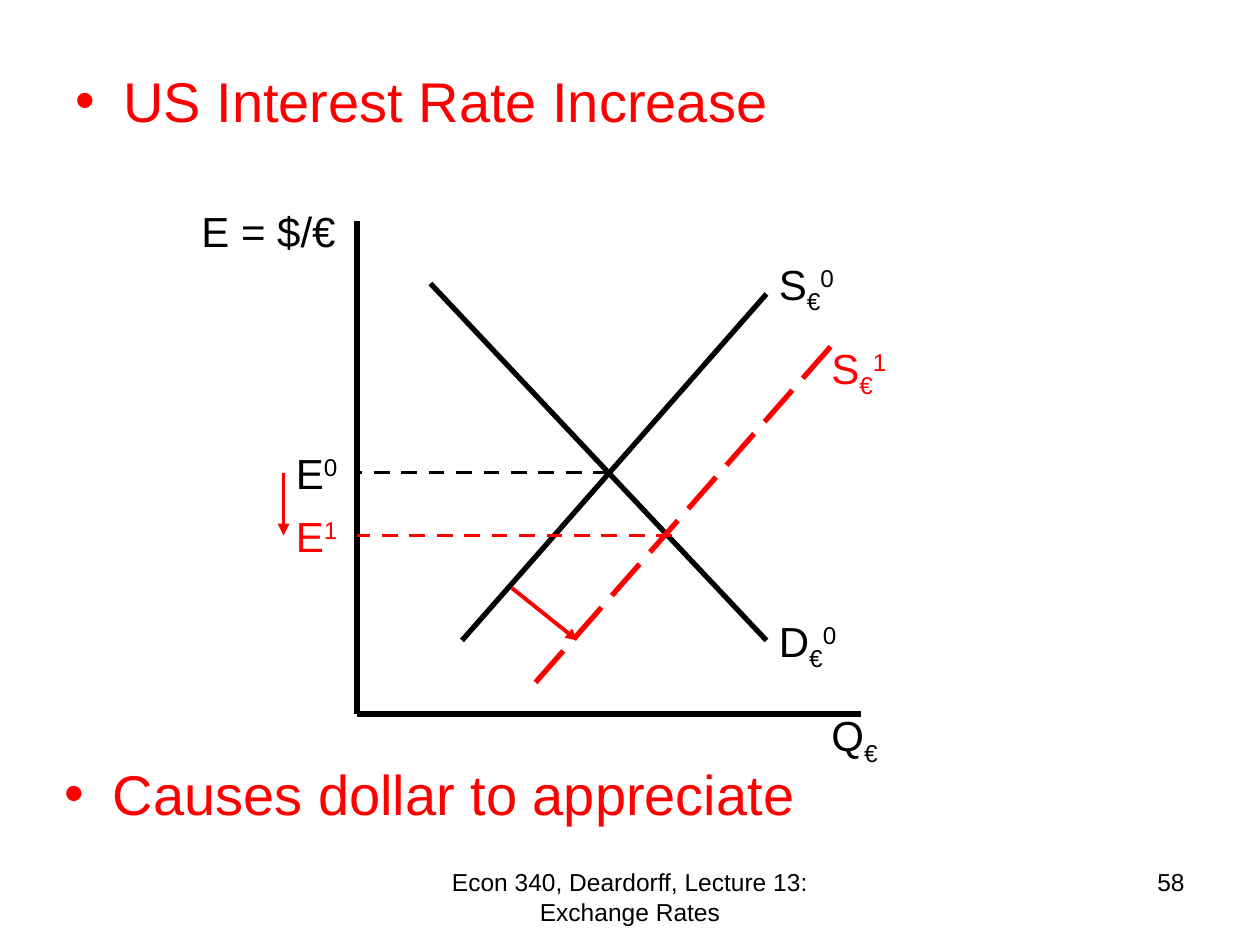
from dataclasses import dataclass

from lxml import etree
from pptx import Presentation
from pptx import util as u
from pptx.dml.color import RGBColor
from pptx.enum import dml, shapes, text
from pptx.oxml.ns import qn

COLS, ROWS = 120, 90
BLACK, RED = "000000", "FF0000"
DASH, LONG_DASH = dml.MSO_LINE.DASH, dml.MSO_LINE.LONG_DASH
LEFT, CENTER, RIGHT = text.PP_ALIGN.LEFT, text.PP_ALIGN.CENTER, text.PP_ALIGN.RIGHT

prs = Presentation()
prs.slide_width, prs.slide_height = u.Inches(10), u.Inches(7.5)
s = prs.slides.add_slide(prs.slide_layouts[6])


@dataclass
class Line:
    x1: float
    y1: float
    x2: float
    y2: float
    color: str = BLACK
    width: float = 3
    dash: dml.MSO_LINE | None = None
    arrow: bool = False


@dataclass
class Label:
    col: float
    row: float
    cols: float
    base: str
    sub: str = ""
    sup: str = ""
    color: str = BLACK
    size: float = 24
    rows: float = 6
    align: text.PP_ALIGN = LEFT
    bullet: bool = False


def x(col: float) -> int:
    return round(prs.slide_width * col / COLS)


def y(row: float) -> int:
    return round(prs.slide_height * row / ROWS)


def rgb(value: str) -> RGBColor:
    return RGBColor.from_string(value)


def draw_line(line: Line) -> None:
    c = s.shapes.add_connector(shapes.MSO_CONNECTOR.STRAIGHT,
                               x(line.x1), y(line.y1), x(line.x2), y(line.y2))
    c.line.color.rgb = rgb(line.color)
    c.line.width = u.Pt(line.width)
    if line.dash:
        c.line.dash_style = line.dash
    if line.arrow:
        etree.SubElement(c.line._get_or_add_ln(), qn("a:tailEnd"), type="triangle")
    etree.SubElement(c._element.spPr, qn("a:effectLst"))


def draw_label(label: Label) -> None:
    sp = s.shapes.add_textbox(x(label.col), y(label.row), x(label.cols), y(label.rows))
    tf = sp.text_frame
    tf.word_wrap = True
    p = tf.paragraphs[0]
    p.alignment = label.align
    for part, baseline in ((label.base, 0), (label.sub, -25000), (label.sup, 30000)):
        if not part:
            continue
        r = p.add_run()
        r.text = part
        r.font.name, r.font.size = "Arial", u.Pt(label.size)
        r.font.color.rgb = rgb(label.color)
        if baseline:
            r.font._element.set("baseline", str(baseline))
    if label.bullet:
        p.line_spacing = 0.8
        pPr = p._p.get_or_add_pPr()
        indent = u.Inches(0.38)
        pPr.set("marL", str(indent))
        pPr.set("indent", str(-indent))
        etree.SubElement(pPr, qn("a:buFont"), typeface="Arial")
        etree.SubElement(pPr, qn("a:buChar"), char="•")


AXIS, BASE = 34, 68
RATE_0, RATE_1 = 45, 51

LINES = [
    Line(AXIS, 21, AXIS, BASE),
    Line(AXIS, BASE, 82, BASE),
    Line(44, 61, 73, 28),
    Line(73, 61, 41, 27),
    Line(58, RATE_0, AXIS, RATE_0, width=2.25, dash=DASH),
    Line(64, RATE_1, AXIS, RATE_1, RED, 2.25, DASH),
    Line(48.75, 56, 55, 61, RED, 2.25, arrow=True),
    Line(27, RATE_0, 27, RATE_1, RED, 2.25, arrow=True),
    Line(51, 65, 80, 32, RED, dash=LONG_DASH),
]

LABELS = [
    Label(6, 7, 108, "US Interest Rate Increase", color=RED, size=32, rows=10, bullet=True),
    Label(5, 73, 108, "Causes dollar to appreciate", color=RED, size=32, rows=10, bullet=True),
    Label(18, 19, 16, "E = $/€"),
    Label(73, 24, 9, "S", "€", "0"),
    Label(78, 32, 9, "S", "€", "1", RED),
    Label(73, 58, 10, "D", "€", "0"),
    Label(78, 67, 8, "Q", "€"),
    Label(27, RATE_0 - 3, 16, "E", sup="0"),
    Label(27, RATE_1 - 3, 16, "E", sup="1", color=RED),
    Label(41, 82, 38, "Econ 340, Deardorff, Lecture 13: Exchange Rates", size=14, align=CENTER),
    Label(86, 82, 28, "58", size=14, align=RIGHT),
]

for line in LINES:
    draw_line(line)
for label in LABELS:
    draw_label(label)

prs.save("out.pptx")
